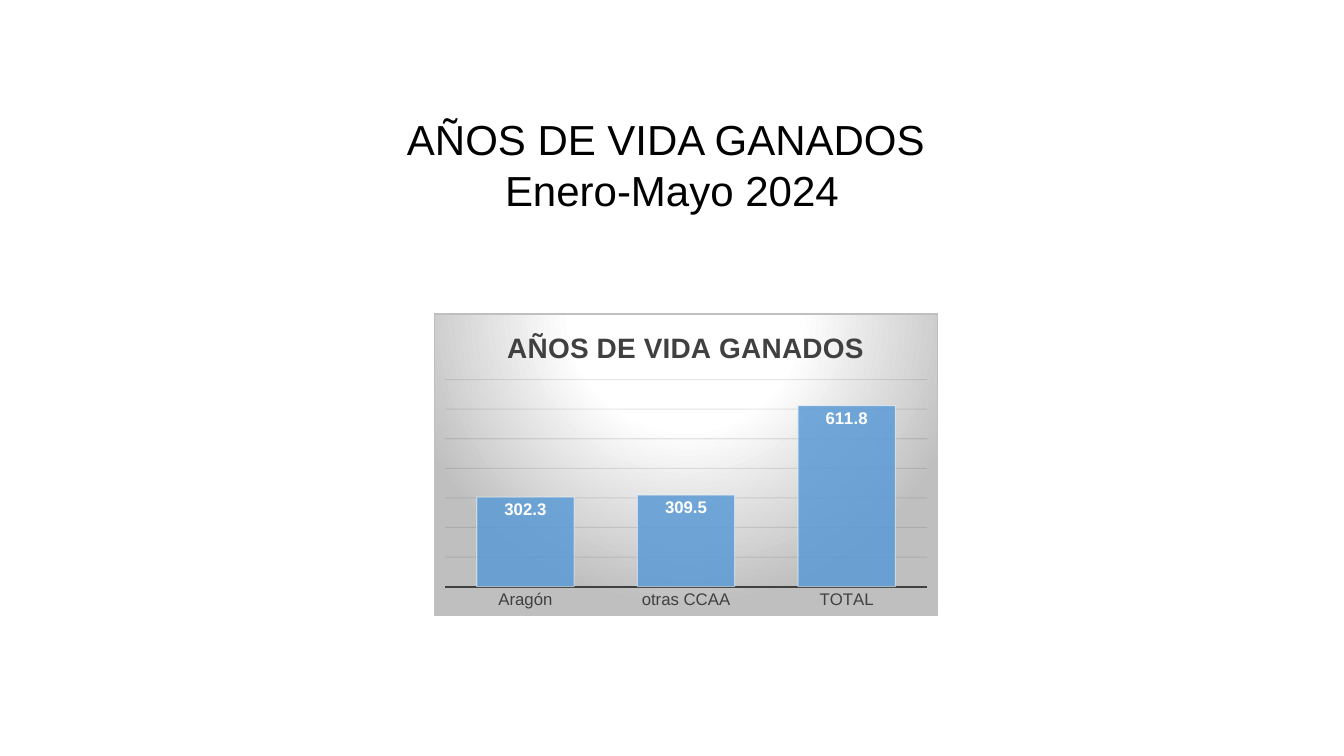
"""Build the slide on years of life gained, January to May 2024."""
from pptx import Presentation
from pptx.chart.data import CategoryChartData
from pptx.dml.color import RGBColor
from pptx.enum.chart import XL_CHART_TYPE as ChartType
from pptx.enum.chart import XL_LABEL_POSITION as LabelPosition
from pptx.enum.chart import XL_TICK_MARK as TickMark
from pptx.enum.text import MSO_ANCHOR as Anchor
from pptx.enum.text import PP_ALIGN as Align
from pptx.oxml import parse_xml
from pptx.oxml.ns import nsdecls
from pptx.util import Inches, Pt

HEADING = ["AÑOS DE VIDA GANADOS ", "Enero-Mayo 2024"]
CHART_TITLE = "AÑOS DE VIDA GANADOS"
YEARS_GAINED = {"Aragón": 302.3, "otras CCAA": 309.5, "TOTAL": 611.8}
COLORS = {"black": "000000", "text": "404040", "grid": "0D0D0D",
          "bar": "5B9BD5", "white": "FFFFFF", "edge": "BFBFBF"}
WIDTH, HEIGHT = Inches(13.33), Inches(7.5)
HEADING_AREA = (0, Inches(1.08), WIDTH, Inches(1.11))
CHART_AREA = (Inches(4.3), Inches(3.11), Inches(5), Inches(3))
PLOT_SHARES = {"x": 0.022, "y": 0.218, "w": 0.958, "h": 0.687}
GRADIENT = [(0, "white"), (39, "white"), (100, "edge")]


def set_font(font, size, color, bold=False, name="Arial"):
    font.name, font.size, font.bold = name, Pt(size), bold
    font.color.rgb = RGBColor.from_string(COLORS[color])


def set_line(line, color, width):
    line.color.rgb = RGBColor.from_string(COLORS[color])
    line.width = Pt(width)


def set_opacity(chart, query, percent):
    for color in chart.element.xpath(query):
        color.append(parse_xml(f'<a:alpha {nsdecls("a")} val="{percent * 1000}"/>'))


def add_heading(page):
    box = page.shapes.add_textbox(*HEADING_AREA)
    frame = box.text_frame
    frame.word_wrap = True
    frame.vertical_anchor = Anchor.TOP
    for index, line in enumerate(HEADING):
        para = frame.add_paragraph() if index else frame.paragraphs[0]
        para.alignment = Align.CENTER
        span = para.add_run()
        span.text = line
        set_font(span.font, 30, "black")


def fill_background(chart):
    stops = "".join(
        f'<a:gs pos="{stop * 1000}"><a:srgbClr val="{COLORS[color]}"/></a:gs>'
        for stop, color in GRADIENT)
    chart.element.xpath("c:chart")[0].addnext(parse_xml(
        f'<c:spPr {nsdecls("c", "a")}><a:gradFill><a:gsLst>{stops}</a:gsLst>'
        '<a:path path="circle">'
        '<a:fillToRect l="50000" t="-80000" r="50000" b="180000"/></a:path>'
        f'</a:gradFill><a:ln w="{Pt(0.75)}"><a:solidFill>'
        f'<a:srgbClr val="{COLORS["edge"]}"/></a:solidFill></a:ln></c:spPr>'))


def place_plot(chart):
    shares = "".join(f'<c:{key} val="{share}"/>' for key, share in PLOT_SHARES.items())
    plot_area = chart.element.xpath("c:chart/c:plotArea")[0]
    for layout in plot_area.xpath("c:layout"):
        plot_area.remove(layout)
    plot_area.insert(0, parse_xml(
        f'<c:layout {nsdecls("c")}><c:manualLayout><c:layoutTarget val="inner"/>'
        f'<c:xMode val="edge"/><c:yMode val="edge"/>{shares}'
        '</c:manualLayout></c:layout>'))


def style_axes(chart):
    regions = chart.category_axis
    regions.major_tick_mark = regions.minor_tick_mark = TickMark.NONE
    set_font(regions.tick_labels.font, 12, "text")
    set_line(regions.format.line, "text", 1.5)
    years = chart.value_axis
    years.visible = False
    years.minimum_scale, years.maximum_scale, years.major_unit = 0, 700, 100
    set_line(years.major_gridlines.format.line, "grid", 0.75)
    set_opacity(chart, ".//c:majorGridlines//a:srgbClr", 10)


def style_bars(chart):
    plot = chart.plots[0]
    plot.gap_width = 65
    plot.vary_by_categories = False
    bars = plot.series[0]
    bars.format.fill.solid()
    bars.format.fill.fore_color.rgb = RGBColor.from_string(COLORS["bar"])
    set_line(bars.format.line, "white", 0.75)
    set_opacity(chart, ".//c:ser/c:spPr/a:solidFill/a:srgbClr", 85)
    set_opacity(chart, ".//c:ser/c:spPr/a:ln//a:srgbClr", 50)
    labels = bars.data_labels
    labels.show_value = True
    labels.position = LabelPosition.INSIDE_END
    set_font(labels.font, 12, "white", bold=True)


def add_years_chart(page):
    data = CategoryChartData()
    data.categories = list(YEARS_GAINED)
    data.add_series("Series 1", list(YEARS_GAINED.values()))
    chart = page.shapes.add_chart(ChartType.COLUMN_CLUSTERED, *CHART_AREA, data).chart
    set_font(chart.font, 10, "black", name="Calibri")
    chart.has_legend = False
    chart.has_title = True
    span = chart.chart_title.text_frame.paragraphs[0].add_run()
    span.text = CHART_TITLE
    set_font(span.font, 20, "text", bold=True)
    chart.chart_title.include_in_layout = False
    style_axes(chart)
    style_bars(chart)
    place_plot(chart)
    fill_background(chart)


def main():
    deck = Presentation()
    deck.slide_width, deck.slide_height = WIDTH, HEIGHT
    page = deck.slides.add_slide(deck.slide_layouts[6])
    add_heading(page)
    add_years_chart(page)
    deck.save("out.pptx")


if __name__ == "__main__":
    main()
